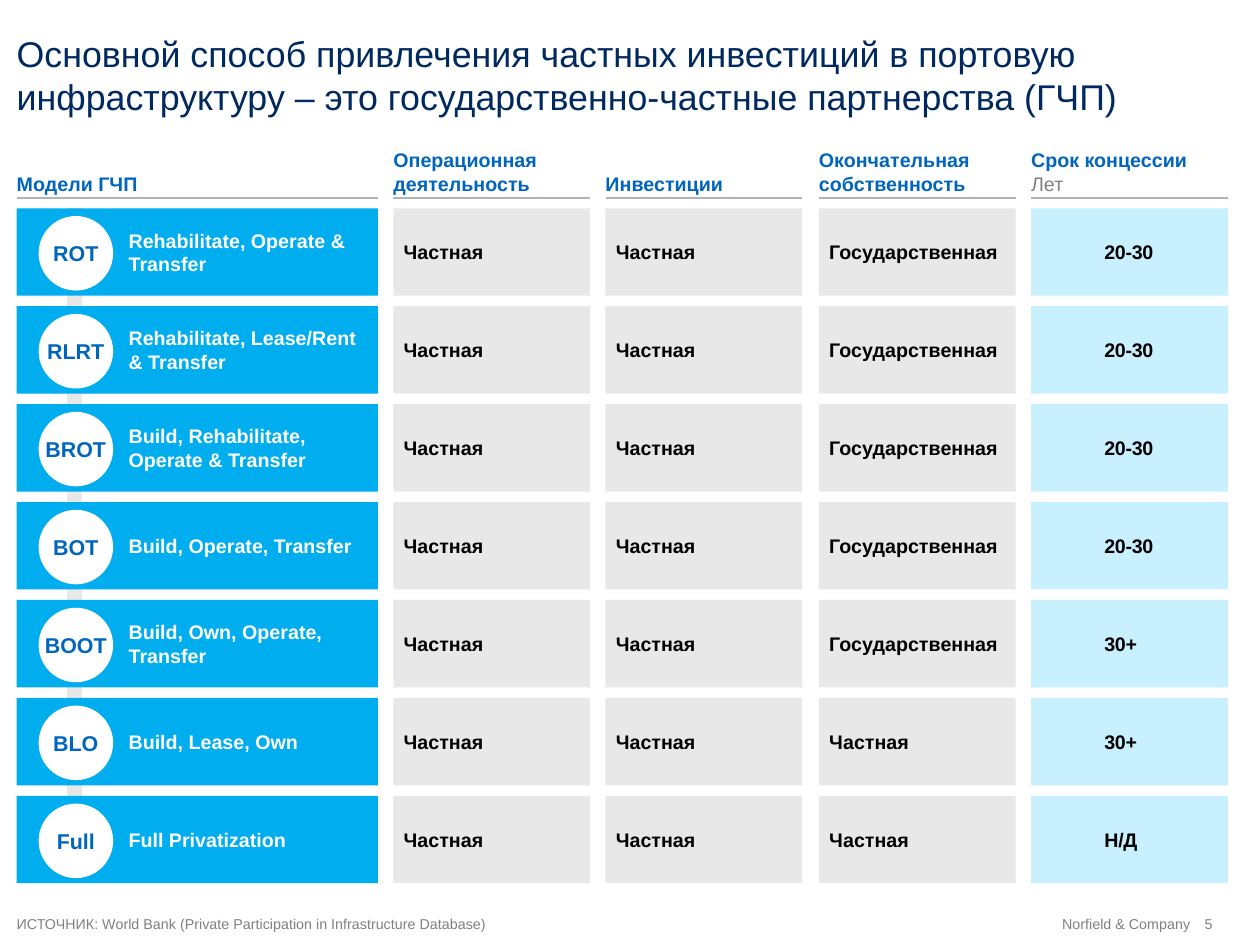
from pptx import Presentation
from pptx.dml.color import RGBColor
from pptx.enum.shapes import MSO_CONNECTOR, MSO_SHAPE
from pptx.enum.text import MSO_ANCHOR, PP_ALIGN
from pptx.util import Inches, Pt
from lxml import etree

RECT, OVAL, STRAIGHT = MSO_SHAPE.RECTANGLE, MSO_SHAPE.OVAL, MSO_CONNECTOR.STRAIGHT
TOP, MIDDLE, BOTTOM = MSO_ANCHOR.TOP, MSO_ANCHOR.MIDDLE, MSO_ANCHOR.BOTTOM
LEFT, CENTER, RIGHT = PP_ALIGN.LEFT, PP_ALIGN.CENTER, PP_ALIGN.RIGHT
A_NS = "http://schemas.openxmlformats.org/drawingml/2006/main"

NAVY, BLUE, CYAN, PALE = "002960", "0065BD", "00ADEF", "C9F0FF"
GRAY, RULE, LIGHT, WHITE, BLACK = "808080", "B3B3B3", "E8E8E8", "FFFFFF", "000000"


def write(s, text, size=11, color=BLACK, bold=False, align=LEFT, anchor=MIDDLE,
          margins=(0, 0, 0, 0), wrap=True, fill=None, indent=0, spacing=0):
    """Format a shape and put text in it, one paragraph per line."""
    if fill:
        s.shadow.inherit = False
        s.fill.solid()
        s.fill.fore_color.rgb = RGBColor.from_string(fill)
        s.line.fill.background()
    tf = s.text_frame
    tf.word_wrap = wrap
    tf.vertical_anchor = anchor
    tf.margin_left, tf.margin_top, tf.margin_right, tf.margin_bottom = map(Inches, margins)
    tf.text = text
    for p in tf.paragraphs:
        p.alignment = align
        if indent:
            p._p.get_or_add_pPr().set("marL", str(Inches(indent)))
        for r in p.runs:
            r.font.name = "Arial"
            r.font.size = Pt(size)
            r.font.bold = bold
            r.font.color.rgb = RGBColor.from_string(color)
            if spacing:
                r.font._element.set("spc", str(spacing))
    return tf


def add_line(x1, y1, x2, y2, color, width):
    c = shapes.add_connector(STRAIGHT, Inches(x1), Inches(y1), Inches(x2), Inches(y2))
    c.line.color.rgb = RGBColor.from_string(color)
    c.line.width = Pt(width)
    etree.SubElement(c._element.spPr, f"{{{A_NS}}}effectLst")


prs = Presentation()
prs.slide_width, prs.slide_height = Inches(9.8), Inches(7.35)
slide = prs.slides.add_slide(prs.slide_layouts[5])
shapes = slide.shapes

# Title
title = shapes.title
title.left, title.top, title.width, title.height = map(Inches, (0.13, 0.25, 9.43, 0.67))
write(title, "Основной способ привлечения частных инвестиций в портовую инфраструктуру "
      "– это государственно-частные партнерства (ГЧП)", size=20, color=NAVY, anchor=TOP)

# Column headers with rules
columns = [
    (0.13, 2.81, "Модели ГЧП"),
    (3.06, 1.53, "Операционная деятельность"),
    (4.71, 1.53, "Инвестиции"),
    (6.37, 1.53, "Окончательная собственность"),
    (8.02, 1.53, "Срок концессии\nЛет"),
]
for x, width, header in columns:
    add_line(x, 1.54, x + width, 1.54, RULE, 0.75)
    s = shapes.add_textbox(Inches(x), Inches(1.15), Inches(width), Inches(0.39))
    tf = write(s, header, color=BLUE, bold=True, anchor=BOTTOM, margins=(0, 0, 0, 0.02))
unit = tf.paragraphs[1].runs[0]
unit.font.bold = False
unit.font.color.rgb = RGBColor.from_string(GRAY)

# Spine behind the model rows
add_line(0.58, 1.62, 0.58, 6.87, LIGHT, 8.75)

# Model rows
PRIVATE, STATE = "Частная", "Государственная"
models = [
    ("ROT", "Rehabilitate, Operate & Transfer", STATE, "20-30"),
    ("RLRT", "Rehabilitate, Lease/Rent & Transfer", STATE, "20-30"),
    ("BROT", "Build, Rehabilitate, Operate & Transfer", STATE, "20-30"),
    ("BOT", "Build, Operate, Transfer", STATE, "20-30"),
    ("BOOT", "Build, Own, Operate, Transfer", STATE, "30+"),
    ("BLO", "Build, Lease, Own", PRIVATE, "30+"),
    ("Full", "Full Privatization", PRIVATE, "Н/Д"),
]
row_top, row_height = 1.62, 0.68
row_step = (6.19 - row_top) / (len(models) - 1)
cell_margins = (0.08, 0.08, 0.08, 0.08)
name_format = dict(fill=CYAN, color=WHITE, margins=(0.87, 0.08, 0.08, 0.08))
cell_format = dict(fill=LIGHT, margins=cell_margins)
term_format = dict(fill=PALE, margins=cell_margins, indent=0.49, spacing=-20)
formats = [name_format] + [cell_format] * 3 + [term_format]

for i, (code, name, owner, term) in enumerate(models):
    y = row_top + i * row_step
    values = (name, PRIVATE, PRIVATE, owner, term)
    for (x, width, _), value, fmt in zip(columns, values, formats):
        s = shapes.add_shape(RECT, Inches(x), Inches(y), Inches(width), Inches(row_height))
        write(s, value, bold=True, **fmt)
    s = shapes.add_shape(OVAL, Inches(0.3), Inches(y + 0.06), Inches(0.58), Inches(0.58))
    write(s, code, size=12, color=BLUE, bold=True, align=CENTER, wrap=False, fill=WHITE)

# Footer
footer = [
    (0.13, 7.87, LEFT, "ИСТОЧНИК: World Bank (Private Participation in Infrastructure Database)"),
    (8.0, 1.26, RIGHT, "Norfield & Company"),
    (9.37, 0.14, LEFT, "5"),
]
for x, width, align, text in footer:
    s = shapes.add_textbox(Inches(x), Inches(7.12), Inches(width), Inches(0.13))
    write(s, text, size=8, color=GRAY, align=align)

prs.save("out.pptx")
